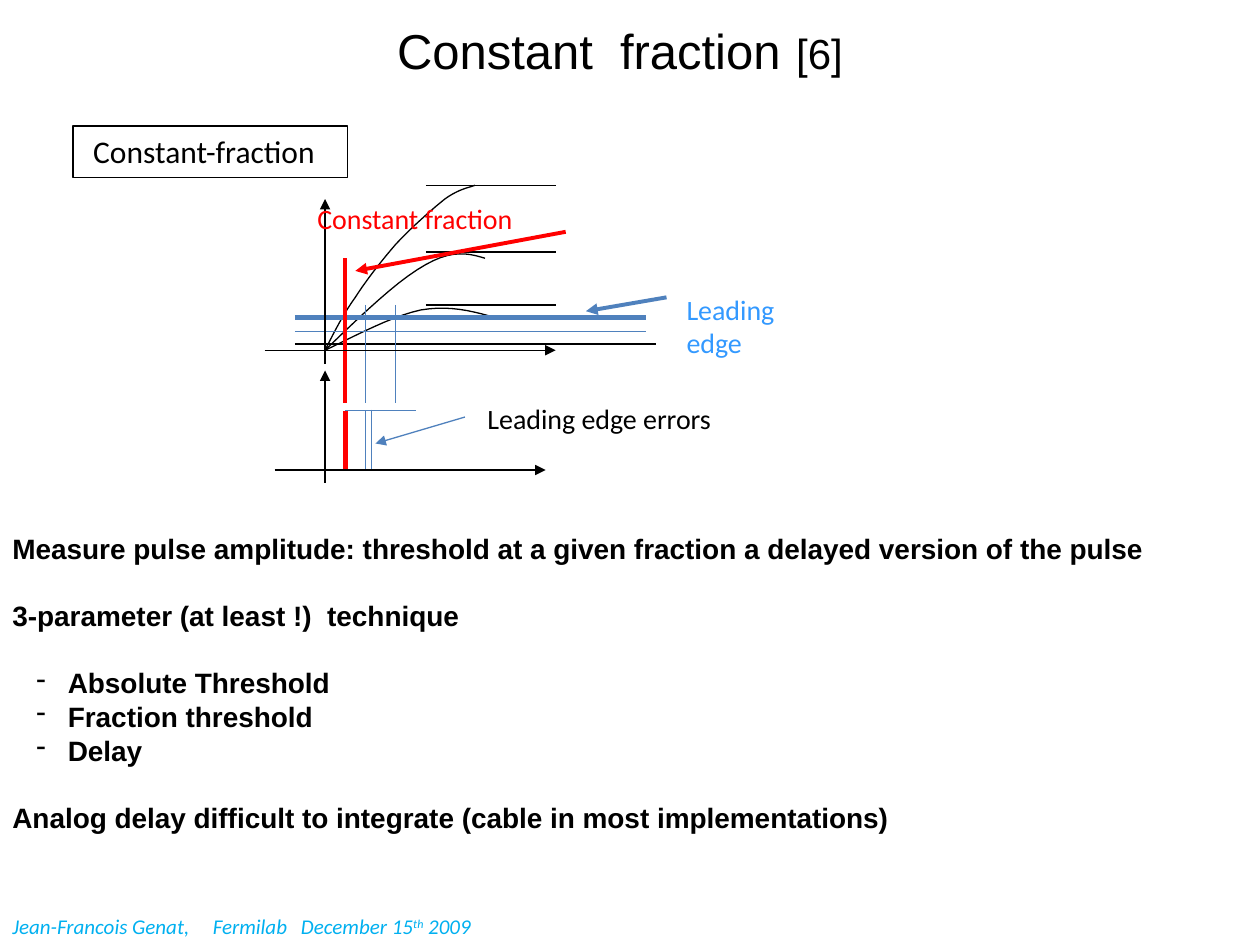
from lxml.etree import SubElement
from pptx import Presentation
from pptx.dml.color import RGBColor
from pptx.enum.shapes import MSO_CONNECTOR, MSO_SHAPE
from pptx.enum.text import MSO_ANCHOR, MSO_AUTO_SIZE, PP_ALIGN
from pptx.oxml.ns import qn
from pptx.util import Inches, Pt

COLORS = {
    "black": "000000",
    "red": "FF0000",
    "blue": "4F81BD",
    "label": "3399FF",
    "footer": "00B0F0",
}
ORIGIN = (2.58, 2.78)
BODY_LINE = Pt(19.2)
CURVE_STEPS = 10

# Bezier segments from the origin: two control points and an end point each
PULSES = [
    [((2.65, 2.64), (2.72, 2.5), (2.82, 2.36)),
     ((2.91, 2.22), (3.02, 2.08), (3.14, 1.94)),
     ((3.26, 1.81), (3.43, 1.66), (3.53, 1.58)),
     ((3.64, 1.5), (3.72, 1.49), (3.77, 1.47))],
    [((2.85, 2.65), (3.11, 2.51), (3.34, 2.46)),
     ((3.57, 2.42), (3.75, 2.47), (3.93, 2.52))],
    [((2.87, 2.5), (3.16, 2.22), (3.38, 2.1)),
     ((3.59, 1.98), (3.72, 2.01), (3.85, 2.05))],
]
PEAK_LEVELS = [1.47, 2, 2.42]

# start x, start y, end x, end y, colour, width
AXES = [
    (2.58, 2.89, 2.58, 1.58, "black", 0.75),
    (2.1, 2.78, 4.41, 2.78, "black", 0.75),
    (2.58, 3.83, 2.58, 2.94, "black", 0.75),
    (2.18, 3.73, 4.33, 3.73, "black", 0.75),
]
THRESHOLDS = [
    (2.34, 2.52, 5.13, 2.52, "blue", 3),
    (2.34, 2.63, 5.13, 2.63, "blue", 0.75),
    (2.34, 2.73, 5.21, 2.73, "black", 0.75),
]
TIME_MARKS = [
    (2.9, 3.26, 2.9, 3.73, "blue", 0.75),
    (2.95, 3.25, 2.95, 3.72, "blue", 0.75),
    (2.74, 3.26, 3.3, 3.26, "blue", 0.75),
    (2.74, 3.26, 2.74, 3.73, "red", 3),
    (2.74, 2.05, 2.74, 3.2, "red", 2.25),
    (3.14, 2.42, 3.14, 3.2, "blue", 0.75),
    (2.9, 2.42, 2.9, 3.2, "blue", 0.75),
]
POINTERS = [
    (4.49, 1.84, 2.82, 2.15, "red", 2.25),
    (3.69, 3.31, 2.98, 3.52, "blue", 0.75),
    (5.29, 2.36, 4.65, 2.47, "blue", 2.25),
]
# left, top, width, height, lines, colour
LABELS = [
    (3.77, 3.14, 3.15, 0.37, ["Leading edge errors"], "black"),
    (5.35, 2.27, 1.42, 0.64, ["Leading", "edge"], "label"),
    (2.42, 1.55, 1.88, 0.37, ["Constant fraction"], "red"),
]
# text, whether it is a dashed item, whether a line's gap comes before it
BODY = [
    ("Measure pulse amplitude: threshold at a given fraction "
     "a delayed version of the pulse", False, False),
    ("3-parameter (at least !)  technique", False, True),
    ("Absolute Threshold", True, True),
    ("Fraction threshold", True, False),
    ("Delay", True, False),
    ("Analog delay difficult to integrate (cable in most implementations)",
     False, True),
]


def color(name):
    return RGBColor.from_string(COLORS[name])


def add_run(paragraph, text, color_name="black", **font_format):
    run = paragraph.add_run()
    run.text = text
    for name, value in font_format.items():
        setattr(run.font, name, value)
    run.font.color.rgb = color(color_name)
    return run


def add_text_box(slide, left, top, width, height):
    box = slide.shapes.add_textbox(
        Inches(left), Inches(top), Inches(width), Inches(height))
    box.text_frame.word_wrap = True
    return box.text_frame


def next_paragraph(frame, index):
    return frame.add_paragraph() if index else frame.paragraphs[0]


def add_line(slide, x1, y1, x2, y2, color_name, width, arrow=False):
    connector = slide.shapes.add_connector(
        MSO_CONNECTOR.STRAIGHT, Inches(x1), Inches(y1), Inches(x2), Inches(y2))
    connector.line.color.rgb = color(color_name)
    connector.line.width = Pt(width)
    if arrow:
        line = connector.line._get_or_add_ln()
        SubElement(line, qn("a:tailEnd"), type="triangle")
    SubElement(connector._element.spPr, qn("a:effectLst"))


def curve_points(start, segments):
    """Sample points along a chain of cubic Bezier segments."""
    points = [start]
    for control1, control2, end in segments:
        begin = points[-1]
        for step in range(1, CURVE_STEPS + 1):
            t = step / CURVE_STEPS
            weights = ((1 - t) ** 3, 3 * t * (1 - t) ** 2,
                       3 * t ** 2 * (1 - t), t ** 3)
            corners = (begin, control1, control2, end)
            points.append(tuple(
                sum(weight * corner[axis]
                    for weight, corner in zip(weights, corners))
                for axis in (0, 1)))
    return points


def add_pulse(slide, segments):
    points = [(Inches(x), Inches(y))
              for x, y in curve_points(ORIGIN, segments)]
    builder = slide.shapes.build_freeform(*points[0])
    builder.add_line_segments(points[1:], close=False)
    pulse = builder.convert_to_shape()
    pulse.shadow.inherit = False
    pulse.fill.background()
    pulse.line.color.rgb = color("black")
    pulse.line.width = Pt(0.75)


def fill_title(title):
    placement = {"left": 0.67, "top": 0, "width": 8.5, "height": 0.75}
    for name, value in placement.items():
        setattr(title, name, Inches(value))
    frame = title.text_frame
    frame.auto_size = MSO_AUTO_SIZE.NONE
    frame.vertical_anchor = MSO_ANCHOR.MIDDLE
    paragraph = frame.paragraphs[0]
    paragraph.alignment = PP_ALIGN.CENTER
    for text, size in (("Constant  fraction", 28), (" ", 32), ("[6]", 24)):
        add_run(paragraph, text, name="Arial", size=Pt(size))


def add_boxed_label(slide):
    box = slide.shapes.add_shape(
        MSO_SHAPE.RECTANGLE, Inches(0.58), Inches(1), Inches(2.18), Inches(0.41))
    box.shadow.inherit = False
    box.fill.background()
    box.line.color.rgb = color("black")
    box.line.width = Pt(0.75)
    frame = box.text_frame
    frame.margin_left = Inches(0.16)
    frame.vertical_anchor = MSO_ANCHOR.TOP
    frame.paragraphs[0].alignment = PP_ALIGN.LEFT
    add_run(frame.paragraphs[0], "Constant-fraction",
            name="Calibri", size=Pt(18))


def add_label(slide, left, top, width, height, lines, color_name):
    frame = add_text_box(slide, left, top, width, height)
    for index, text in enumerate(lines):
        add_run(next_paragraph(frame, index), text, color_name,
                name="Calibri", size=Pt(16))


def add_body(slide):
    frame = add_text_box(slide, 0, 4.17, 9.67, 2.52)
    for index, (text, dashed, gap) in enumerate(BODY):
        paragraph = next_paragraph(frame, index)
        paragraph.line_spacing = BODY_LINE
        if gap:
            paragraph.space_before = BODY_LINE
        if dashed:
            properties = paragraph._p.get_or_add_pPr()
            properties.set("marL", str(Inches(0.44)))
            properties.set("indent", str(-Inches(0.25)))
            SubElement(properties, qn("a:buChar"), char="-")
        add_run(paragraph, text, name="Arial", size=Pt(16), bold=True)


def add_footer(slide):
    paragraph = add_text_box(slide, 0, 7.2, 3.92, 0.3).paragraphs[0]
    tabs = SubElement(paragraph._p.get_or_add_pPr(), qn("a:tabLst"))
    for position in (1.59, 2.29):
        SubElement(tabs, qn("a:tab"), pos=str(Inches(position)), algn="l")
    font = {"name": "Calibri", "size": Pt(12), "italic": True}
    add_run(paragraph, "Jean-Francois Genat,\tFermilab\tDecember 15",
            "footer", **font)
    ordinal = add_run(paragraph, "th", "footer", **font)
    ordinal._r.get_or_add_rPr().set("baseline", "30000")
    add_run(paragraph, " 2009", "footer", **font)


def main():
    presentation = Presentation()
    presentation.slide_width = Inches(10)
    presentation.slide_height = Inches(7.5)
    slide = presentation.slides.add_slide(presentation.slide_layouts[5])
    fill_title(slide.shapes.title)
    add_body(slide)
    for segments in PULSES:
        add_pulse(slide, segments)
    peaks = [(3.38, y, 4.41, y, "black", 0.75) for y in PEAK_LEVELS]
    for line in THRESHOLDS + TIME_MARKS + peaks:
        add_line(slide, *line)
    for line in AXES + POINTERS:
        add_line(slide, *line, arrow=True)
    for label in LABELS:
        add_label(slide, *label)
    add_boxed_label(slide)
    add_footer(slide)
    presentation.save("out.pptx")


if __name__ == "__main__":
    main()
